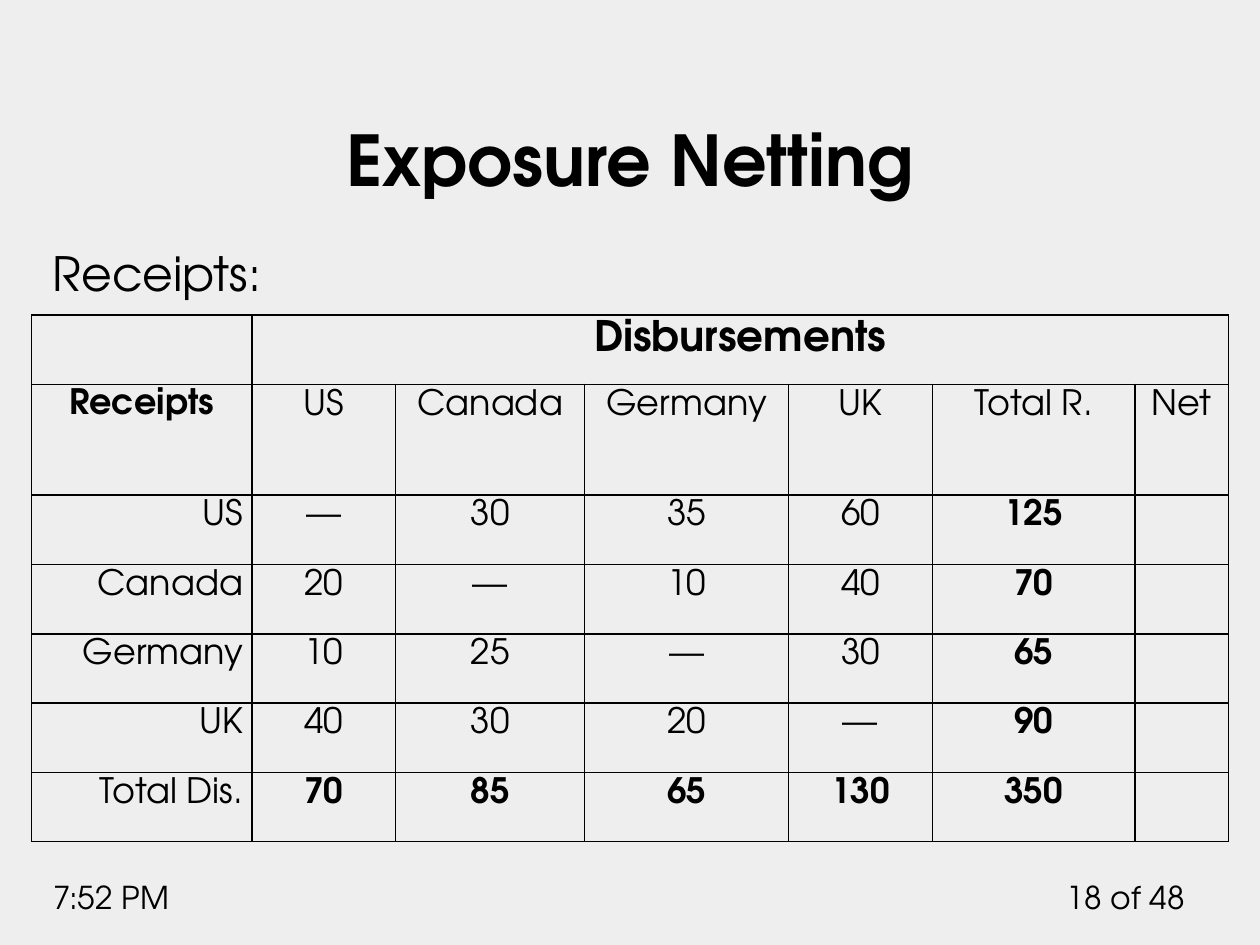
import pptx
import pptx.util
import pptx.dml.color
import pptx.enum.text
import pptx.oxml
import pptx.oxml.ns

ALIGN = pptx.enum.text.PP_ALIGN
ANCHOR = pptx.enum.text.MSO_ANCHOR
THEME = {
    "font": "TeX Gyre Adventor",
    "ink": "000000",
    "paper": "EEEEEE",
    "title": 40,
    "body": 27,
    "header": 24,
    "cell": 20,
    "footer": 18,
    "border": 1,
}


def write(tf, text, size, align=ALIGN.LEFT, bold=False):
    tf.text = text
    p = tf.paragraphs[0]
    p.alignment = align
    for r in p.runs:
        r.font.name = THEME["font"]
        r.font.size = pptx.util.Pt(size)
        r.font.bold = bold
        r.font.color.rgb = pptx.dml.color.RGBColor.from_string(THEME["ink"])
    return p


def add_borders(cell):
    tcPr = cell._tc.get_or_add_tcPr()
    width = pptx.util.Pt(THEME["border"])
    for i, side in enumerate(("lnL", "lnR", "lnT", "lnB")):
        tcPr.insert(i, pptx.oxml.parse_xml(
            f'<a:{side} {pptx.oxml.ns.nsdecls("a")} w="{width}"><a:solidFill>'
            f'<a:srgbClr val="{THEME["ink"]}"/></a:solidFill></a:{side}>'))


prs = pptx.Presentation()
prs.slide_width = pptx.util.Inches(10)
prs.slide_height = pptx.util.Inches(7.5)
col = prs.slide_width // 100
row = prs.slide_height // 75
s = prs.slides.add_slide(prs.slide_layouts[6])
s.background.fill.solid()
s.background.fill.fore_color.rgb = pptx.dml.color.RGBColor.from_string(THEME["paper"])

labels = [
    ("18 of 48", (83.3, 69.2, 11.7, 4), THEME["footer"], ALIGN.RIGHT, False, ANCHOR.TOP),
    ("7:52 PM", (3.3, 69.2, 15.8, 4), THEME["footer"], ALIGN.LEFT, False, ANCHOR.TOP),
    ("Receipts:", (3.2, 18.9, 93.5, 5.3), THEME["body"], ALIGN.LEFT, False, ANCHOR.TOP),
    ("Exposure Netting", (5, 3.9, 90, 12.5), THEME["title"], ALIGN.CENTER, True, ANCHOR.BOTTOM),
]
for text, (x, y, w, h), size, align, bold, anchor in labels:
    sp = s.shapes.add_textbox(int(x * col), int(y * row), int(w * col), int(h * row))
    tf = sp.text_frame
    tf.word_wrap = True
    tf.vertical_anchor = anchor
    write(tf, text, size, align, bold)

rows = [
    ["", "Disbursements", "", "", "", "", ""],
    ["Receipts", "US", "Canada", "Germany", "UK", "Total R.", "Net"],
    ["US", "—", "30", "35", "60", "125", ""],
    ["Canada", "20", "—", "10", "40", "70", ""],
    ["Germany", "10", "25", "—", "30", "65", ""],
    ["UK", "40", "30", "20", "—", "90", ""],
    ["Total Dis.", "70", "85", "65", "130", "350", ""],
]
widths = [17.5, 11.4, 15, 16.2, 11.4, 16.1, 7.4]
heights = [5.5, 8.8] + [5.5] * 5
last = len(rows) - 1
total = 5

frame = s.shapes.add_table(len(rows), len(widths), int(2.5 * col), 25 * row,
                           int(sum(widths) * col), int(sum(heights) * row))
table = frame.table
table.first_row = False
table.horz_banding = False
for column, w in zip(table.columns, widths):
    column.width = int(w * col)
for line, h in zip(table.rows, heights):
    line.height = int(h * row)
table.cell(0, 1).merge(table.cell(0, len(widths) - 1))

for i, values in enumerate(rows):
    for j, value in enumerate(values):
        cell = table.cell(i, j)
        cell.fill.background()
        cell.margin_left = cell.margin_right = pptx.util.Inches(0.07)
        cell.margin_top = cell.margin_bottom = 0
        add_borders(cell)
        if value:
            is_total = i > 1 and j > 0 and (i == last or j == total)
            bold = i == 0 or (i, j) == (1, 0) or is_total
            size = THEME["header"] if i == 0 else THEME["cell"]
            align = ALIGN.RIGHT if i > 1 and j == 0 else ALIGN.CENTER
            p = write(cell.text_frame, value, size, align, bold)
            p.line_spacing = 1.15

prs.save("out.pptx")
